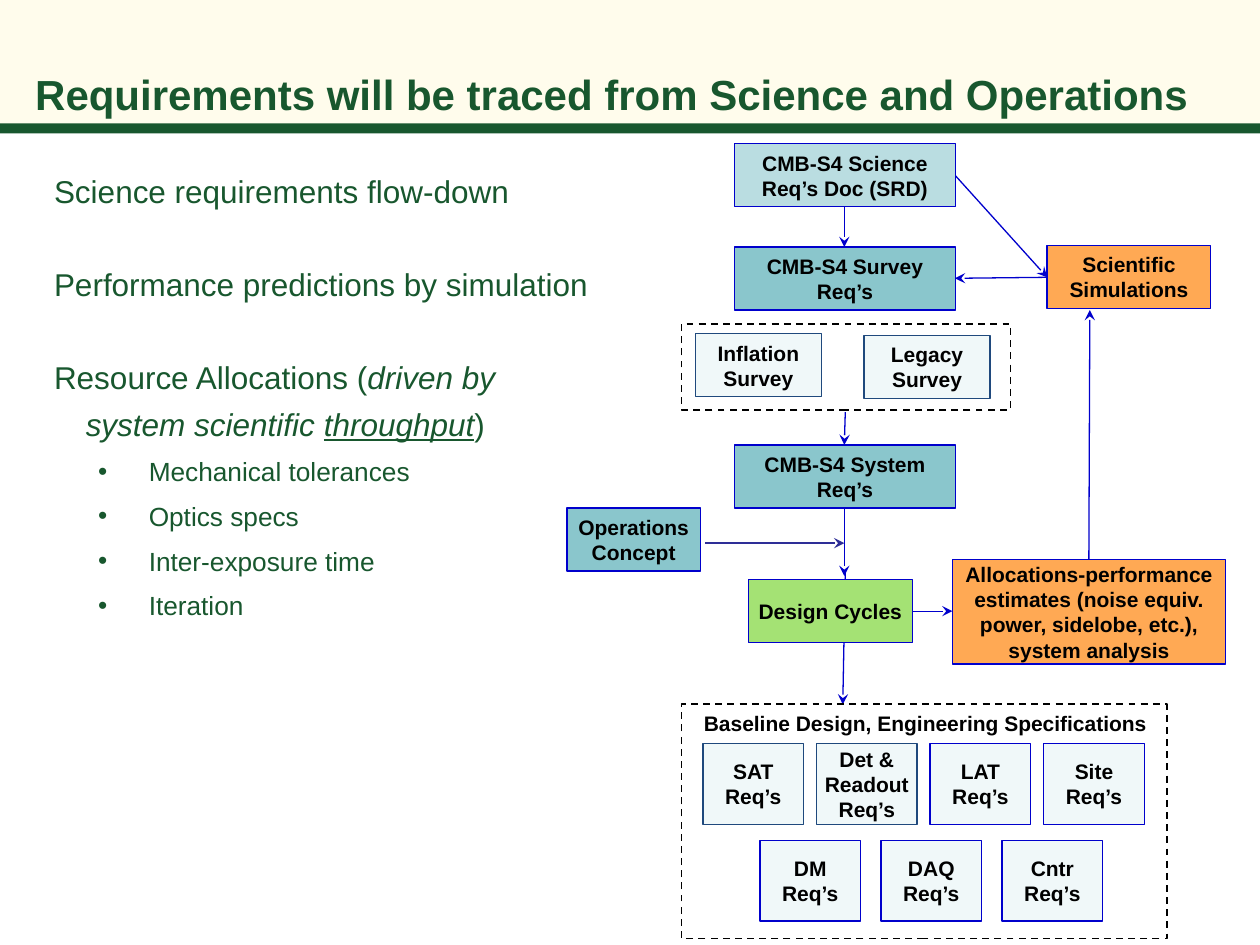
from dataclasses import dataclass

from lxml import etree
from pptx import Presentation
from pptx import util as u
from pptx.dml.color import RGBColor
from pptx.enum import dml, shapes, text
from pptx.oxml import ns


@dataclass(frozen=True)
class Theme:
    font: str = "Arial"
    green: str = "18572E"
    cream: str = "FFFCEC"
    black: str = "000000"
    blue: str = "0000CC"
    navy: str = "1F497D"
    violet: str = "2E2E97"
    sky: str = "BADDE1"
    teal: str = "8AC6CC"
    pale: str = "F0F8F9"
    lime: str = "A4E274"
    orange: str = "FFA954"
    head: int = 24
    body: int = 18
    sub: int = 15
    label: int = 12
    thin: float = 0.75
    dash: float = 1


T = Theme()
BOLD = {"bold": True}
ITALIC = {"italic": True}

LINES = [
    (17.02, 4.17, 17.02, 4.98, T.blue),
    (17.02, 9.6, 17.02, 11.61, T.blue),
    (17.04, 11.51, 16.99, 14.2, T.blue),
    (21.95, 11.28, 21.97, 6.25, T.blue),
    (14.22, 10.95, 17.02, 10.95, T.violet),
    (17.04, 8.31, 17.02, 8.97, T.blue),
    (18.39, 12.32, 19.2, 12.32, T.blue),
    (19.25, 3.53, 21.11, 5.59, T.blue),
    (21.11, 5.59, 19.25, 5.61, T.blue),
]

STEPS = [
    ("CMB-S4 Science Req’s Doc (SRD)", (14.81, 2.9, 4.45, 1.27), T.sky, T.blue),
    ("CMB-S4 Survey Req’s", (14.81, 4.98, 4.45, 1.27), T.teal, T.blue),
    ("CMB-S4 System Req’s", (14.81, 8.97, 4.45, 1.27), T.teal, T.blue),
    ("Operations Concept", (11.43, 10.24, 2.69, 1.27), T.teal, T.blue),
    ("Design Cycles", (15.09, 11.68, 3.3, 1.27), T.lime, T.blue),
    ("Scientific Simulations", (21.11, 4.95, 3.3, 1.27), T.orange, T.blue),
    ("Allocations-performance estimates (noise equiv. power, sidelobe, etc.), "
     "system analysis", (19.2, 11.28, 5.51, 2.11), T.orange, T.blue),
    ("Inflation\nSurvey", (14.02, 6.73, 2.54, 1.27), T.pale, T.navy),
    ("Legacy Survey", (17.42, 6.76, 2.54, 1.27), T.pale, T.navy),
]

ROWS = [
    (14.17, 14.99, 2.29, [("SAT", T.navy), ("Det & Readout", T.navy),
                          ("LAT", T.blue), ("Site", T.blue)]),
    (15.32, 16.94, 2.44, [("DM", T.blue), ("DAQ", T.blue), ("Cntr", T.blue)]),
]

TOPICS = [
    [("Science requirements flow-down", {})],
    [("Performance predictions by simulation", {})],
    [("Resource Allocations (", {}),
     ("driven by system scientific ", ITALIC),
     ("throughput", {**ITALIC, "underline": True}),
     (")", {})],
]
POINTS = ["Mechanical tolerances", "Optics specs", "Inter-exposure time", "Iteration"]


def put(item, vals):
    for key, val in vals.items():
        setattr(item, key, val)


def rgb(code):
    return RGBColor.from_string(code)


def write(para, words, size, color, **look):
    run = para.add_run()
    run.text = words
    put(run.font, {"name": T.font, "size": u.Pt(size), **look})
    run.font.color.rgb = rgb(color)


def setup(frame, pad, anchor):
    sides = ("margin_left", "margin_top", "margin_right", "margin_bottom")
    put(frame, dict.fromkeys(sides, u.Cm(pad)))
    put(frame, {"word_wrap": True, "vertical_anchor": anchor})


def rect(slide, area, fill=None, line=None, width=T.thin):
    box = slide.shapes.add_shape(shapes.MSO_SHAPE.RECTANGLE, *map(u.Cm, area))
    box.shadow.inherit = False
    if fill:
        box.fill.solid()
        box.fill.fore_color.rgb = rgb(fill)
    else:
        box.fill.background()
    if line:
        box.line.color.rgb = rgb(line)
        box.line.width = u.Pt(width)
    else:
        box.line.fill.background()
    return box


def node(slide, words, area, fill, line):
    frame = rect(slide, area, fill, line).text_frame
    setup(frame, 0.13, text.MSO_ANCHOR.MIDDLE)
    for num, part in enumerate(words.split("\n")):
        para = frame.add_paragraph() if num else frame.paragraphs[0]
        para.alignment = text.PP_ALIGN.CENTER
        write(para, part, T.label, T.black, **BOLD)


def group(slide, area):
    box = rect(slide, area, line=T.black, width=T.dash)
    box.line.dash_style = dml.MSO_LINE.DASH


def arrow(slide, x1, y1, x2, y2, color):
    line = slide.shapes.add_connector(
        shapes.MSO_CONNECTOR.STRAIGHT, *map(u.Cm, (x1, y1, x2, y2)))
    line.line.color.rgb = rgb(color)
    line.line.width = u.Pt(T.thin)
    etree.SubElement(line.line._get_or_add_ln(), ns.qn("a:tailEnd"), type="stealth")
    etree.SubElement(line._element.spPr, ns.qn("a:effectLst"))


def note(slide, area, pad=0, anchor=text.MSO_ANCHOR.TOP):
    frame = slide.shapes.add_textbox(*map(u.Cm, area)).text_frame
    setup(frame, pad, anchor)
    return frame


def indent(para, left, hang, bullet=None):
    props = para._p.get_or_add_pPr()
    props.set("marL", str(u.Cm(left)))
    props.set("indent", str(-u.Cm(hang)))
    if bullet:
        tint = etree.SubElement(props, ns.qn("a:buClr"))
        etree.SubElement(tint, ns.qn("a:srgbClr"), val=T.green)
        etree.SubElement(props, ns.qn("a:buFont"), typeface=T.font)
        etree.SubElement(props, ns.qn("a:buChar"), char=bullet)


def outline(slide):
    frame = note(slide, (0.46, 3.28, 11.5, 14.33))
    for num, runs in enumerate(TOPICS):
        para = frame.add_paragraph() if num else frame.paragraphs[0]
        put(para, {"line_spacing": 1.25, "space_before": u.Pt(26 if num else 0)})
        indent(para, 1.27, 0.64)
        for words, look in runs:
            write(para, words, T.body, T.green, **look)
    for words in POINTS:
        para = frame.add_paragraph()
        put(para, {"level": 1, "line_spacing": 1.25, "space_before": u.Pt(3)})
        indent(para, 2.54, 1.02, "•")
        write(para, words, T.sub, T.green)


def header(slide):
    rect(slide, (0, 0, 25.4, 2.59), T.cream)
    rect(slide, (0, 2.49, 25.4, 0.2), T.green)
    frame = note(slide, (0.71, 0, 24.49, 2.39), anchor=text.MSO_ANCHOR.BOTTOM)
    write(frame.paragraphs[0], "Requirements will be traced from Science and Operations",
          T.head, T.green, **BOLD)


def flow(slide):
    for line in LINES:
        arrow(slide, *line)
    for step in STEPS:
        node(slide, *step)
    group(slide, (13.74, 6.53, 6.63, 1.73))


def base(slide):
    group(slide, (13.74, 14.2, 9.78, 4.72))
    frame = note(slide, (13.94, 14.2, 9.58, 0.76), 0.13)
    frame.margin_left = frame.margin_right = u.Cm(0.25)
    write(frame.paragraphs[0], "Baseline Design, Engineering Specifications",
          T.label, T.black, **BOLD)
    for left, top, pitch, parts in ROWS:
        for num, (name, line) in enumerate(parts):
            area = (left + num * pitch, top, 2.03, 1.63)
            node(slide, f"{name} Req’s", area, T.pale, line)


def main():
    deck = Presentation()
    put(deck, {"slide_width": u.Cm(25.4), "slide_height": u.Cm(19.05)})
    slide = deck.slides.add_slide(deck.slide_layouts[6])
    for draw in (header, outline, flow, base):
        draw(slide)
    deck.save("out.pptx")


if __name__ == "__main__":
    main()
